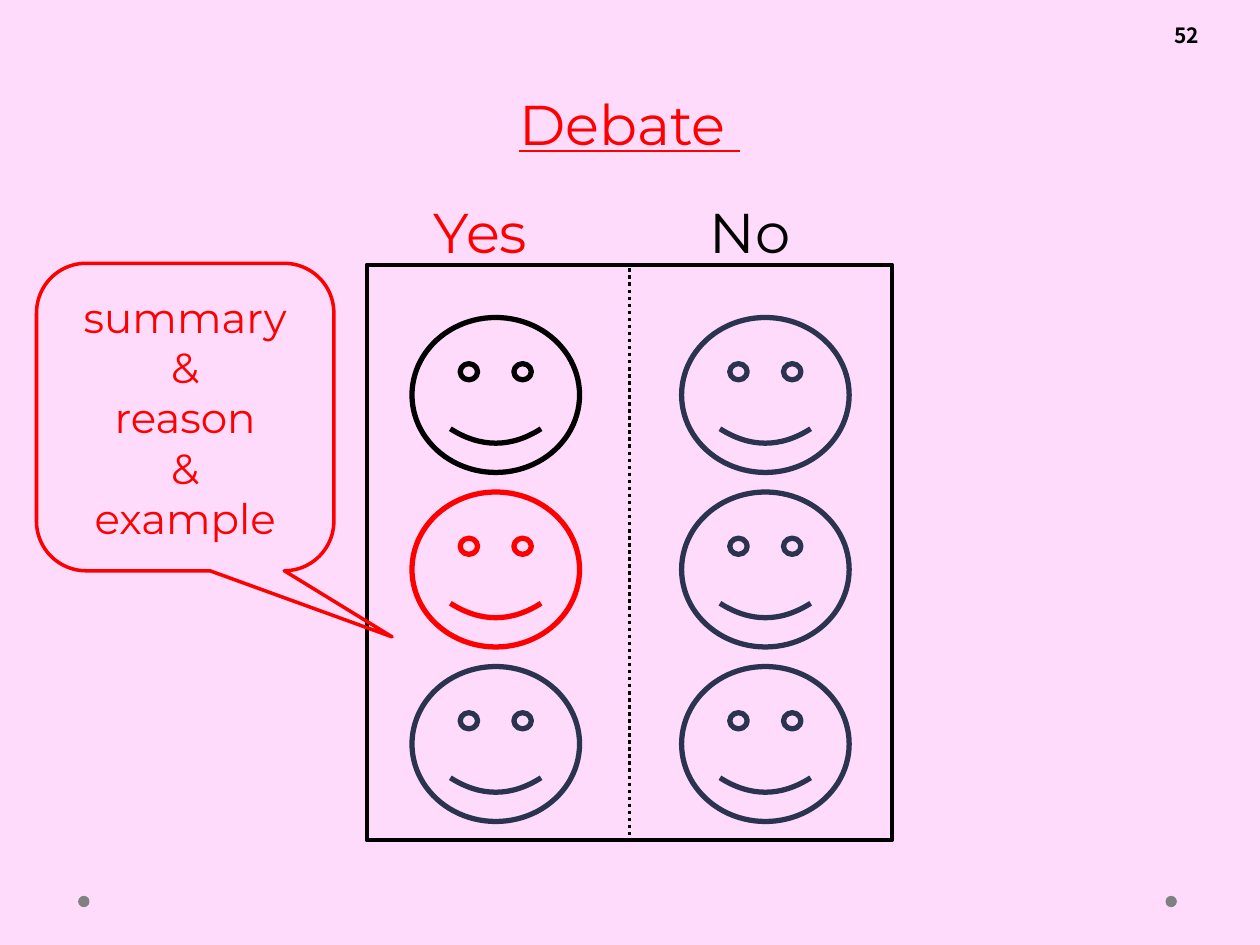
import pptx
import pptx.util
import pptx.dml.color
import pptx.enum.dml
import pptx.enum.shapes
import pptx.enum.text
import pptx.oxml

Inches, Pt = pptx.util.Inches, pptx.util.Pt
SHAPE = pptx.enum.shapes.MSO_SHAPE
ALIGN = pptx.enum.text.PP_ALIGN
ANCHOR = pptx.enum.text.MSO_ANCHOR

THEME = {
    "background": "FEDAFB", "black": "000000", "red": "FF0000",
    "navy": "2A344F", "gray": "808080",
    "font": "Montserrat", "number_font": "Noto Sans CJK JP",
    "heading_pt": 32, "callout_pt": 24, "number_pt": 12,
}

TITLE = "Debate "
PAGE_NUMBER = "52"
TEAMS = [
    {"name": "Yes", "color": "red", "faces": ["black", "red", "navy"]},
    {"name": "No", "color": "black", "faces": ["navy", "navy", "navy"]},
]
CALLOUT = ["summary", "&", "reason", "&", "example"]

BOARD = (2.91, 2.1, 4.17, 4.57)
FACE_LEFT, FACE_TOP, FACE_W, FACE_H = 3.27, 2.52, 1.33, 1.23
COLUMN_STEP, ROW_STEP = 2.14, 1.385


def rgb(name):
    return pptx.dml.color.RGBColor.from_string(THEME[name])


def add_shape(slide, kind, box, line=None, width=0, fill=None):
    sp = slide.shapes.add_shape(kind, *map(Inches, box))
    sp.shadow.inherit = False
    if fill:
        sp.fill.solid()
        sp.fill.fore_color.rgb = rgb(fill)
    else:
        sp.fill.background()
    if line:
        sp.line.color.rgb = rgb(line)
        sp.line.width = Pt(width)
    else:
        sp.line.fill.background()
    return sp


def write(tf, lines, size, color, font="font", align=ALIGN.CENTER,
          bold=False, underline=False):
    tf.word_wrap = True
    for i, text in enumerate(lines):
        p = tf.paragraphs[0] if i == 0 else tf.add_paragraph()
        p.alignment = align
        r = p.add_run()
        r.text = text
        r.font.name = THEME[font]
        r.font.size = Pt(THEME[size])
        r.font.color.rgb = rgb(color)
        r.font.bold = bold
        r.font.underline = underline


def add_text(slide, box, text, size, color, **style):
    sp = slide.shapes.add_textbox(*map(Inches, box))
    write(sp.text_frame, [text], size, color, **style)
    return sp


def add_divider(slide):
    left, top, width, height = BOARD
    x = Inches(left + width / 2)
    line = slide.shapes.add_connector(
        pptx.enum.shapes.MSO_CONNECTOR.STRAIGHT,
        x, Inches(top + 0.03), x, Inches(top + height))
    line.line.color.rgb = rgb("black")
    line.line.width = Pt(2)
    line.line.dash_style = pptx.enum.dml.MSO_LINE.ROUND_DOT
    sp_pr = line._element.spPr
    sp_pr.append(pptx.oxml.parse_xml(
        '<a:effectLst xmlns:a="http://schemas.openxmlformats.org/drawingml/2006/main"/>'))


def add_team(slide, column, team):
    shift = column * COLUMN_STEP
    for row, color in enumerate(team["faces"]):
        box = (FACE_LEFT + shift, FACE_TOP + row * ROW_STEP, FACE_W, FACE_H)
        add_shape(slide, SHAPE.SMILEY_FACE, box, color, 3)
    heading = add_text(slide, (3.15 + shift, 1.52, 1.57, 0.64),
                       team["name"], "heading_pt", team["color"])
    heading.text_frame.margin_right = Inches(0.34)


def add_callout(slide):
    sp = add_shape(slide, SHAPE.ROUNDED_RECTANGULAR_CALLOUT,
                   (0.29, 2.09, 2.36, 2.44), "red", 2)
    for i, value in enumerate((0.696, 0.715, 0.167)):
        sp.adjustments[i] = value
    sp.text_frame.vertical_anchor = ANCHOR.MIDDLE
    write(sp.text_frame, CALLOUT, "callout_pt", "red")


def main():
    prs = pptx.Presentation()
    prs.slide_width, prs.slide_height = Inches(10), Inches(7.5)
    slide = prs.slides.add_slide(prs.slide_layouts[6])
    slide.background.fill.solid()
    slide.background.fill.fore_color.rgb = rgb("background")

    for x in (9.25, 0.62):
        add_shape(slide, SHAPE.OVAL, (x, 7.11, 0.09, 0.09), fill="gray")
    add_text(slide, (9.22, 0.13, 0.55, 0.3), PAGE_NUMBER, "number_pt", "black",
             font="number_font", align=ALIGN.LEFT, bold=True)
    add_text(slide, (0.55, 0.66, 8.9, 0.64), TITLE, "heading_pt", "red",
             underline=True)
    add_shape(slide, SHAPE.RECTANGLE, BOARD, "black", 2.25)
    add_divider(slide)
    for column, team in enumerate(TEAMS):
        add_team(slide, column, team)
    add_callout(slide)
    prs.save("out.pptx")


if __name__ == "__main__":
    main()
